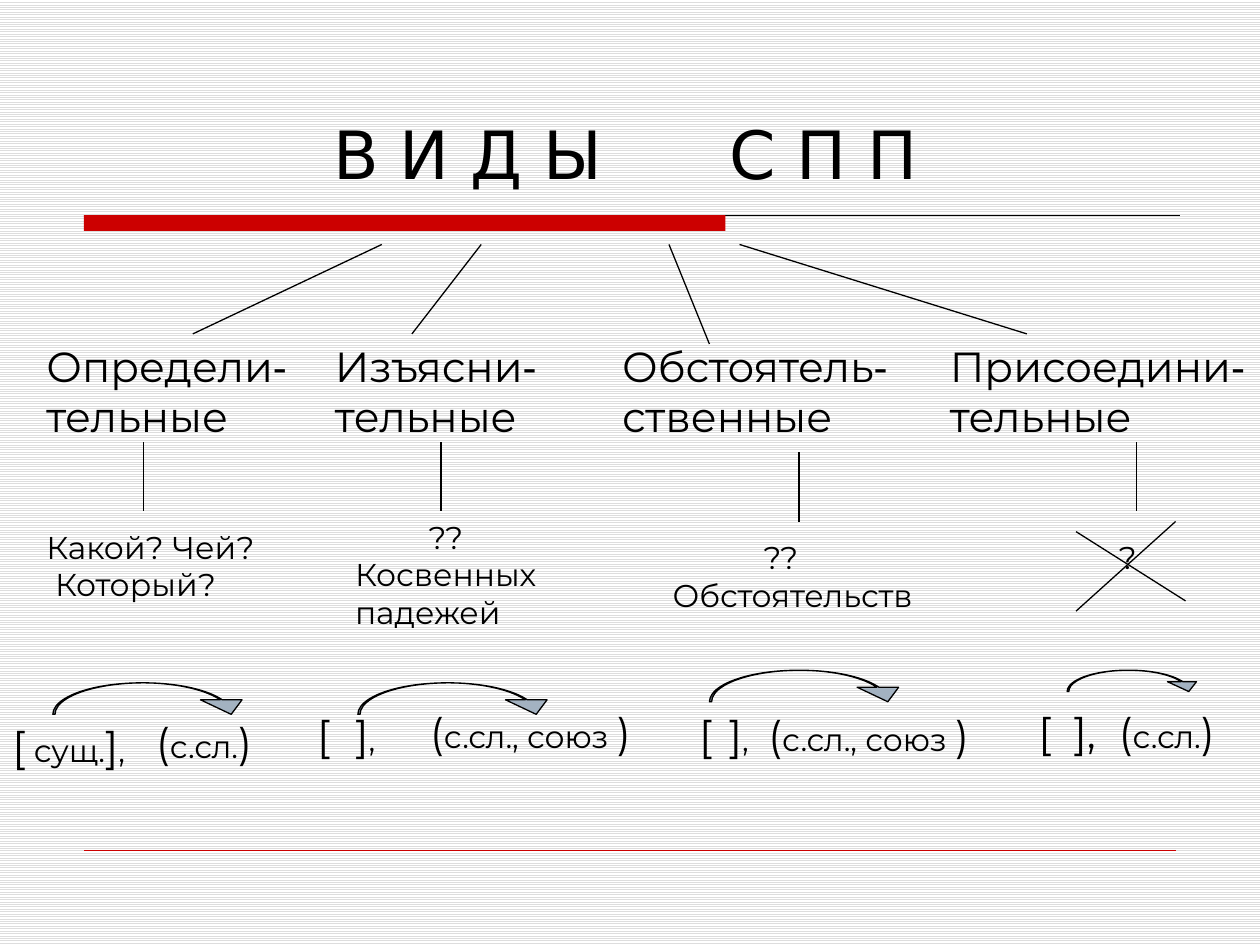
from dataclasses import dataclass

from lxml.etree import SubElement
from pptx import Presentation
from pptx.dml.color import RGBColor
from pptx.enum.dml import MSO_PATTERN as Pattern
from pptx.enum.shapes import MSO_CONNECTOR as Connector, MSO_SHAPE as Shape
from pptx.enum.text import MSO_ANCHOR as Anchor, MSO_AUTO_SIZE as AutoSize, PP_ALIGN as Align
from pptx.oxml.ns import qn
from pptx.slide import Slide
from pptx.util import Pt

BLACK = RGBColor(0x00, 0x00, 0x00)
WHITE = RGBColor(0xFF, 0xFF, 0xFF)
STRIPE = RGBColor(0xDD, 0xDD, 0xDD)
RED = RGBColor(0xCC, 0x00, 0x00)
STEEL = RGBColor(0xA3, 0xB2, 0xC1)
BODY, HYPHEN, TITLE = "Montserrat", "Arial", "DejaVu Sans"
LARGE, SMALL = 24, 18


@dataclass
class Board:
    """Draws the elements of the slide in one style, with lengths in points."""

    slide: Slide
    ink: RGBColor = BLACK
    font: str = BODY

    def stripes(self):
        fill = self.slide.background.fill
        fill.patterned()
        fill.pattern = Pattern.LIGHT_HORIZONTAL
        fill.fore_color.rgb = STRIPE
        fill.back_color.rgb = WHITE

    def line(self, x1, y1, x2, y2, color=None, width=0.75):
        stroke = self.slide.shapes.add_connector(
            Connector.STRAIGHT, Pt(x1), Pt(y1), Pt(x2), Pt(y2))
        stroke.line.color.rgb = color or self.ink
        stroke.line.width = Pt(width)
        SubElement(stroke._element.spPr, qn("a:effectLst"))

    def shape(self, kind, x, y, width, height, color):
        figure = self.slide.shapes.add_shape(kind, Pt(x), Pt(y), Pt(width), Pt(height))
        figure.shadow.inherit = False
        figure.fill.solid()
        figure.fill.fore_color.rgb = color
        return figure

    def bar(self, x, y, width, height):
        self.shape(Shape.RECTANGLE, x, y, width, height, RED).line.fill.background()

    def arc(self, x, y, width, height, adjustments):
        arrow = self.shape(Shape.CURVED_DOWN_ARROW, x, y, width, height, STEEL)
        arrow.line.color.rgb = self.ink
        arrow.line.width = Pt(0.75)
        for index, value in enumerate(adjustments):
            arrow.adjustments[index] = value

    def text(self, x, y, width, height, paragraphs, align=Align.LEFT, anchor=Anchor.TOP):
        frame = self.slide.shapes.add_textbox(Pt(x), Pt(y), Pt(width), Pt(height)).text_frame
        frame.word_wrap = True
        frame.auto_size = AutoSize.SHAPE_TO_FIT_TEXT
        frame.vertical_anchor = anchor
        for index, (indent, runs) in enumerate(paragraphs):
            paragraph = frame.add_paragraph() if index else frame.paragraphs[0]
            paragraph.alignment = align
            if indent:
                paragraph._p.get_or_add_pPr().set("indent", str(Pt(indent)))
            for run in runs:
                self.run(paragraph, *run)

    def run(self, paragraph, words, size, font=None, spacing=0):
        run = paragraph.add_run()
        run.text = words
        run.font.size = Pt(size)
        run.font.name = font or self.font
        run.font.color.rgb = self.ink
        if spacing:
            run._r.get_or_add_rPr().set("spc", str(round(spacing * 100)))


def main():
    deck = Presentation()
    deck.slide_width, deck.slide_height = Pt(720), Pt(540)
    board = Board(deck.slides.add_slide(deck.slide_layouts[6]))

    board.stripes()
    board.line(48, 123, 674.5, 123)
    board.bar(48, 123, 366.5, 9)
    board.line(48, 486, 672, 486, RED, 0.25)
    title = [("В И Д Ы", 38, TITLE), (" ", 38, TITLE, 60), ("С П П", 38, TITLE)]
    board.text(42.5, 49, 630, 64.8, [(0, title)], Align.CENTER, Anchor.BOTTOM)

    clauses = [
        (19.4, 162, "Определи", "тельные"),
        (184.3, 153.4, "Изъясни", "тельные"),
        (348.5, 180, "Обстоятель", "ственные"),
        (535.7, 201.6, "Присоедини", "тельные"),
    ]
    for x, width, start, end in clauses:
        name = [(start, LARGE), ("-", LARGE, HYPHEN), (end, LARGE)]
        board.text(x, 190.8, width, 64.8, [(0, name)])

    questions = [
        (19.4, 298, 143.3, 50.4, [(0, "Какой? Чей?"), (5, "Который?")]),
        (195.8, 292.3, 130.3, 72, [(42, "??"), (0, "Косвенных падежей")]),
        (377.3, 303.8, 163.4, 50.4, [(52, "??"), (0, "Обстоятельств")]),
        (632.2, 303.8, 25.2, 50.4, [(0, "?")]),
    ]
    for x, y, width, height, rows in questions:
        board.text(x, y, width, height,
                   [(indent, [(words, SMALL)]) for indent, words in rows])
    board.line(614.9, 303.8, 677.5, 343.4)
    board.line(614.9, 349.2, 671.8, 298)

    branches = [(218.2, 110.2, 190.8), (275, 235.4, 190.8),
                (382.3, 405.4, 196.6), (422.6, 586.8, 190.8)]
    for top_x, bottom_x, bottom_y in branches:
        board.line(top_x, 139.7, bottom_x, bottom_y)
    for x, y in [(82.1, 252.7), (252, 252.7), (456.5, 258.5), (649.4, 252.7)]:
        board.line(x, y, x, y + 39.6)

    main_parts = [
        (0, 408.2, 102.2, (" сущ.", SMALL), SMALL, Align.LEFT),
        (174.2, 401.8, 66.2, (" ", SMALL, BODY, 9.4), SMALL, Align.LEFT),
        (383.8, 401.8, 59.8, (" ", SMALL, BODY, 4.7), SMALL, Align.CENTER),
        (581, 400.3, 57.6, (" ", LARGE, BODY, 6.3), LARGE, Align.CENTER),
    ]
    for x, y, width, content, comma, align in main_parts:
        formula = [("[", LARGE), content, ("]", LARGE), (",", comma)]
        board.text(x, y, width, 36, [(0, formula)], align, Anchor.MIDDLE)

    subordinate_parts = [
        (82.1, 406.1, 85, "с.сл.", Align.LEFT),
        (223.9, 400.3, 158.4, "с.сл., союз ", Align.CENTER),
        (432, 401.8, 156.2, "с.сл., союз ", Align.LEFT),
        (632.2, 400.3, 87.8, "с.сл.", Align.LEFT),
    ]
    for x, y, width, words, align in subordinate_parts:
        formula = [("(", LARGE), (words, SMALL), (")", LARGE)]
        board.text(x, y, width, 36, [(0, formula)], align, Anchor.MIDDLE)

    for x, y in [(30.2, 390.2), (204.5, 390.2), (405.4, 383)]:
        board.arc(x, y, 113.8, 18, (0.07, 1.32, 0.46))
    board.arc(609.8, 383, 77.8, 12.2, (0.08, 1.36, 0.46))

    deck.save("out.pptx")


if __name__ == "__main__":
    main()
